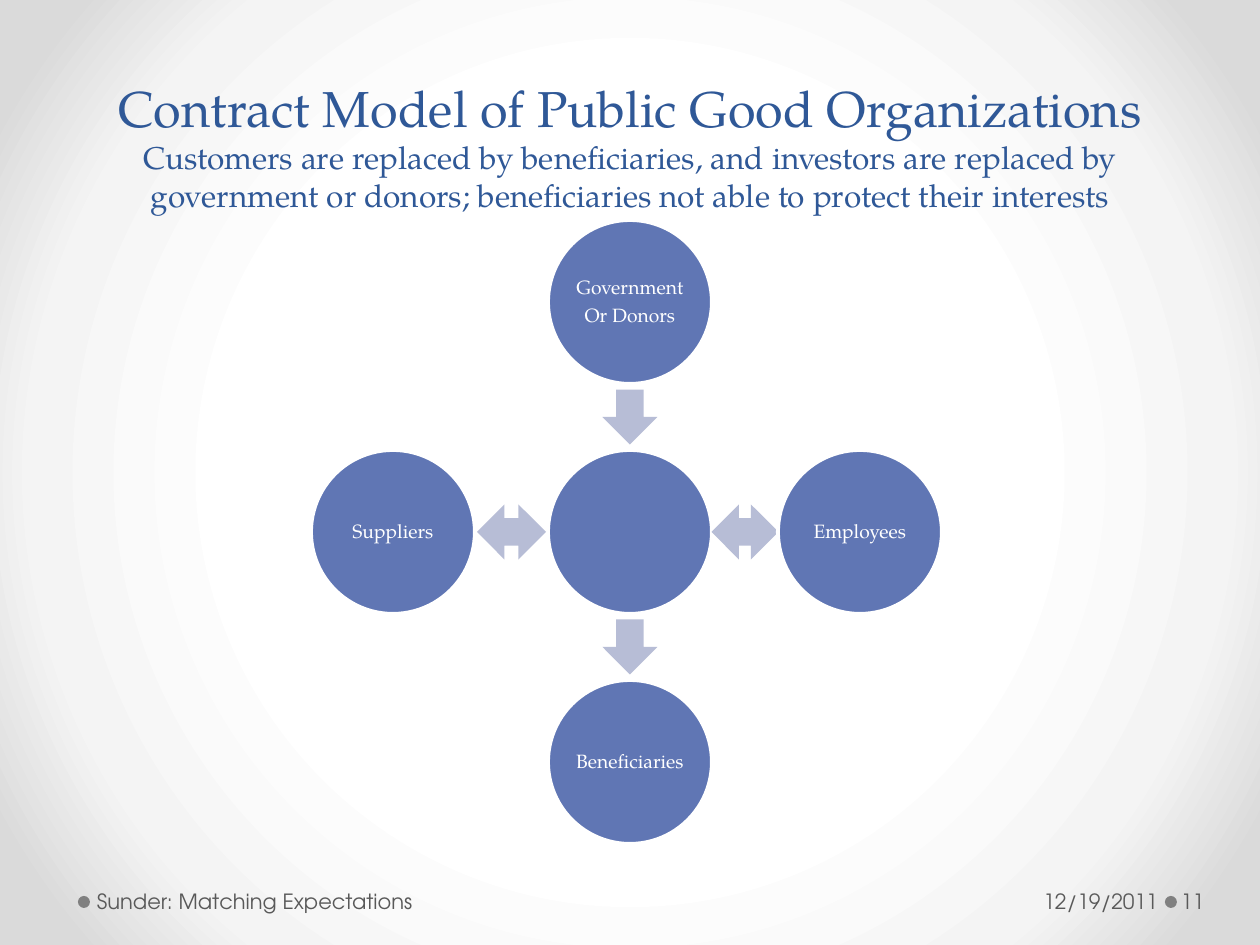
"""Build a slide showing the contract model of public good organizations."""
import dataclasses

import pptx
import pptx.dml.color
import pptx.enum.shapes
import pptx.enum.text
import pptx.oxml
import pptx.oxml.ns
import pptx.util

SHAPE = pptx.enum.shapes.MSO_SHAPE
ALIGN = pptx.enum.text.PP_ALIGN
ANCHOR = pptx.enum.text.MSO_ANCHOR
PX = 914400 // 126


@dataclasses.dataclass(frozen=True)
class Theme:
    """Fonts, type sizes in points and colours."""

    serif: str = "TeX Gyre Pagella"
    sans: str = "TeX Gyre Adventor"
    title_size: float = 28.8
    subtitle_size: float = 18
    party_size: float = 11
    footer_size: float = 12
    title: str = "2F5897"
    party: str = "6076B4"
    arrow: str = "B7BDD6"
    white: str = "FFFFFF"
    footer: str = "595959"
    bullet: str = "808080"
    backdrop: tuple = ((50, "FFFFFF"), (76, "F4F4F4"), (92, "DADADA"))


THEME = Theme()


def rgb(colour):
    """Turn a hex string into a colour."""
    return pptx.dml.color.RGBColor.from_string(colour)


def emu(*lengths):
    """Scale px lengths to EMU."""
    return [round(length * PX) for length in lengths]


def style(font, name, size, colour):
    """Set the face, size and colour of a font."""
    font.name = name
    font.size = pptx.util.Pt(size)
    font.color.rgb = rgb(colour)


def set_margins(frame, left, top, right, bottom):
    """Set the px insets of a text frame."""
    frame.margin_left, frame.margin_top, frame.margin_right, frame.margin_bottom = emu(
        left, top, right, bottom)


def add_solid(slide, kind, box, colour):
    """Add a flat preset shape without outline."""
    solid = slide.shapes.add_shape(kind, *emu(*box))
    solid.shadow.inherit = False
    solid.fill.solid()
    solid.fill.fore_color.rgb = rgb(colour)
    solid.line.fill.background()
    return solid


def paint_backdrop(slide):
    """Fill the background with a circular gradient."""
    slide.background.fill.gradient()
    linear = slide.element.find(".//" + pptx.oxml.ns.qn("a:gradFill"))
    stops = "".join(
        f'<a:gs pos="{place * 1000}"><a:srgbClr val="{colour}"/></a:gs>'
        for place, colour in THEME.backdrop)
    circular = pptx.oxml.parse_xml(
        f'<a:gradFill {pptx.oxml.ns.nsdecls("a")} rotWithShape="1"><a:gsLst>{stops}</a:gsLst>'
        '<a:path path="circle"><a:fillToRect l="50000" t="50000" r="50000" b="50000"/></a:path>'
        "</a:gradFill>")
    linear.getparent().replace(linear, circular)


def place_title(slide, box, heading, explanation):
    """Write the heading and its explanation in the title placeholder."""
    title = slide.shapes.title
    title.left, title.top, title.width, title.height = emu(*box)
    frame = title.text_frame
    frame.word_wrap = True
    frame.auto_size = pptx.enum.text.MSO_AUTO_SIZE.NONE
    frame.vertical_anchor = ANCHOR.BOTTOM
    paragraph = frame.paragraphs[0]
    paragraph.alignment = ALIGN.CENTER
    style(paragraph.font, THEME.serif, THEME.title_size, THEME.title)
    paragraph.add_run().text = heading
    paragraph.add_line_break()
    subtitle = paragraph.add_run()
    subtitle.text = explanation
    subtitle.font.size = pptx.util.Pt(THEME.subtitle_size)


def add_party(slide, box, label):
    """Add one circle with its label lines."""
    circle = add_solid(slide, SHAPE.OVAL, box, THEME.party)
    circle.line.color.rgb = rgb(THEME.white)
    circle.line.width = pptx.util.Pt(2.25)
    if not label:
        return
    frame = circle.text_frame
    frame.word_wrap = True
    frame.vertical_anchor = ANCHOR.MIDDLE
    set_margins(frame, 2, 2, 2, 2)
    frame.text = label
    for paragraph in frame.paragraphs:
        paragraph.alignment = ALIGN.CENTER
        paragraph.line_spacing = 0.9
        paragraph.space_after = pptx.util.Pt(4)
        style(paragraph.font, THEME.serif, THEME.party_size, THEME.white)


def place_contract_model(slide, box):
    """Place four parties around the organization, each with an arrow halfway."""
    left, top, width, height = box
    center_x, center_y = left + width / 2, top + height / 2
    diameter, arrow_height = 164, 55

    def centered(dx, dy, w, h):
        return center_x + dx - w / 2, center_y + dy - h / 2, w, h

    add_party(slide, centered(0, 0, diameter, diameter), "")
    parties = (
        ("Government \nOr Donors", 0, -230, SHAPE.DOWN_ARROW, 55),
        ("Employees", 230, 0, SHAPE.LEFT_RIGHT_ARROW, 67),
        ("Beneficiaries", 0, 230, SHAPE.DOWN_ARROW, 55),
        ("Suppliers", -237, 0, SHAPE.LEFT_RIGHT_ARROW, 69),
    )
    for label, dx, dy, arrow, arrow_width in parties:
        add_solid(slide, arrow, centered(dx / 2, dy / 2, arrow_width, arrow_height), THEME.arrow)
        add_party(slide, centered(dx, dy, diameter, diameter), label)


def place_footer(slide, box):
    """Place the source, date and page number with their dots."""
    left, top, _, height = box
    for dot_left in (0, 1087):
        add_solid(slide, SHAPE.OVAL, (left + dot_left, top + 20, 12, 12), THEME.bullet)
    entries = (
        ("12/19/2011", 799, 287, ALIGN.RIGHT, 13, 6),
        ("Sunder: Matching Expectations", 13, 392, ALIGN.LEFT, 6, 13),
        ("11", 1099, 77, ALIGN.LEFT, 4, 6),
    )
    for words, offset, width, alignment, inset_left, inset_right in entries:
        entry = slide.shapes.add_textbox(*emu(left + offset, top, width, height))
        frame = entry.text_frame
        frame.word_wrap = True
        frame.vertical_anchor = ANCHOR.MIDDLE
        set_margins(frame, inset_left, 6, inset_right, 6)
        frame.text = words
        paragraph = frame.paragraphs[0]
        paragraph.alignment = alignment
        style(paragraph.font, THEME.sans, THEME.footer_size, THEME.footer)


def main():
    """Build and save the presentation."""
    deck = pptx.Presentation()
    deck.slide_width, deck.slide_height = emu(1260, 945)
    slide = deck.slides.add_slide(deck.slide_layouts[5])
    paint_backdrop(slide)
    place_title(
        slide, (63, 0, 1134, 220), "Contract Model of Public Good Organizations",
        "Customers are replaced by beneficiaries, and investors are replaced by "
        "government or donors; beneficiaries not able to protect their interests")
    place_contract_model(slide, (311, 220, 638, 624))
    place_footer(slide, (78, 876, 1176, 50))
    deck.save("out.pptx")


if __name__ == "__main__":
    main()
